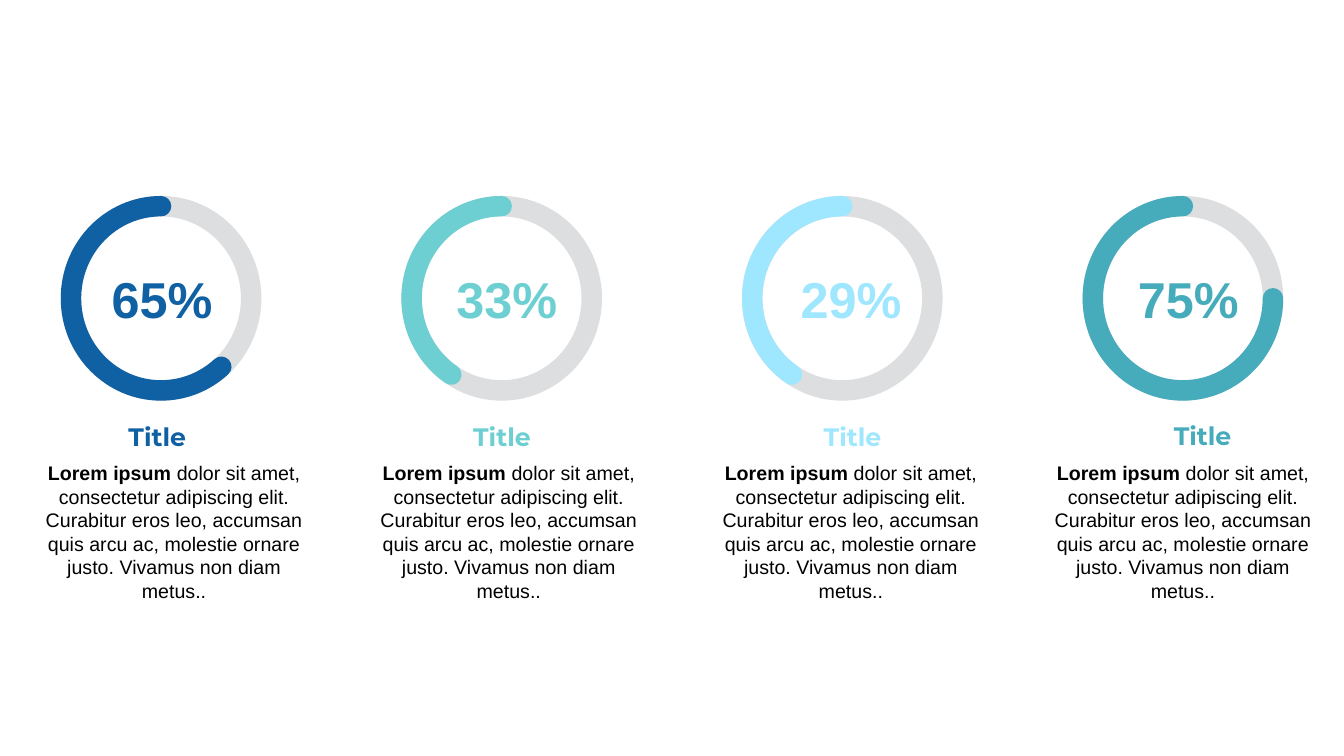
from math import cos, radians, sin, tan

from pptx import Presentation
from pptx.dml.color import RGBColor
from pptx.enum.shapes import MSO_SHAPE
from pptx.enum.text import MSO_AUTO_SIZE, PP_ALIGN
from pptx.oxml.ns import qn
from pptx.util import Pt

DONUT = MSO_SHAPE.DONUT
CENTER = PP_ALIGN.CENTER
GROW = MSO_AUTO_SIZE.SHAPE_TO_FIT_TEXT

BLACK = RGBColor(0x00, 0x00, 0x00)
GREY = RGBColor(0xDC, 0xDE, 0xE0)
BLUE = RGBColor(0x10, 0x60, 0xA4)
TEAL = RGBColor(0x6D, 0xCF, 0xD2)
SKY = RGBColor(0x9F, 0xE7, 0xFF)
SEA = RGBColor(0x46, 0xAC, 0xBC)

LEFT, TOP, PITCH = 43.4, 140, 243.3
WIDTH, HEIGHT, BAND = 143.3, 146.2, 14.6

LEAD = "Lorem ipsum "
BODY = (
    "dolor sit amet, consectetur adipiscing elit. Curabitur eros leo, "
    "accumsan quis arcu ac, molestie ornare justo. Vivamus non diam metus.."
)

DIALS = [
    ("65%", BLUE, 222, 70.4, 51.2, 297.4, 18.5),
    ("33%", TEAL, 146, 316.7, 297.4, 297.4, 257.6),
    ("29%", SKY, 146, 562.5, 547.8, 297.4, 502),
    ("75%", SEA, 270, 803.5, 797.8, 296.6, 739.2),
]


def write(para, text, size=14, color=BLACK, font="Arial", bold=False):
    run = para.add_run()
    run.text = text
    run.font.name = font
    run.font.size = Pt(size)
    run.font.bold = bold
    run.font.color.rgb = color


def curve(mid, sine, cosine, stops):
    dots = []
    for start, end in zip(stops, stops[1:]):
        a, b = radians(start), radians(end)
        pull = 4 / 3 * tan((b - a) / 4)
        for sa, ca in (
            (sin(a) + pull * cos(a), cos(a) - pull * sin(a)),
            (sin(b) - pull * cos(b), cos(b) + pull * sin(b)),
            (sin(b), cos(b)),
        ):
            dots.append(
                tuple(Pt(m + s * sa + c * ca) for m, s, c in zip(mid, sine, cosine))
            )
    return dots


class Board:
    def __init__(self, slide):
        self.slide = slide

    def paint(self, shape, color):
        shape.shadow.inherit = False
        shape.fill.solid()
        shape.fill.fore_color.rgb = color
        shape.line.fill.background()

    def ring(self, x, y):
        shape = self.slide.shapes.add_shape(
            DONUT, Pt(x), Pt(y), Pt(WIDTH), Pt(HEIGHT)
        )
        shape.adjustments[0] = BAND / WIDTH
        self.paint(shape, GREY)

    def arc(self, x, y, sweep, color):
        mid = x + WIDTH / 2, y + HEIGHT / 2
        cap = BAND / 2

        def sweep_at(inset, stops):
            across, down = WIDTH / 2 - inset, HEIGHT / 2 - inset
            return curve(mid, (-across, 0), (0, -down), stops)

        def cap_at(turn, stops):
            s, c = sin(radians(turn)), cos(radians(turn))
            hub = (
                mid[0] - (WIDTH / 2 - cap) * s,
                mid[1] - (HEIGHT / 2 - cap) * c,
            )
            return curve(hub, (-cap * c, cap * s), (-cap * s, -cap * c), stops)

        stops = [*range(0, sweep, 90), sweep]
        dots = sweep_at(0, stops)
        dots += cap_at(sweep, [0, 90, 180])
        dots += sweep_at(BAND, stops[::-1])
        dots += cap_at(0, [180, 270, 360])
        pen = self.slide.shapes.build_freeform(Pt(mid[0]), Pt(y))
        pen.add_line_segments(dots, close=True)
        shape = pen.convert_to_shape()
        self.bend(shape)
        self.paint(shape, color)

    def bend(self, shape):
        steps = list(shape.element.iter(qn("a:lnTo")))
        for first, second, third in zip(steps[::3], steps[1::3], steps[2::3]):
            first.tag = qn("a:cubicBezTo")
            for step in (second, third):
                first.append(step[0])
                step.getparent().remove(step)

    def label(self, x, y, w, h):
        frame = self.slide.shapes.add_textbox(
            Pt(x), Pt(y), Pt(w), Pt(h)
        ).text_frame
        frame.word_wrap = True
        frame.auto_size = GROW
        para = frame.paragraphs[0]
        para.alignment = CENTER
        return para


def main():
    deck = Presentation()
    deck.slide_width, deck.slide_height = Pt(960), Pt(540)
    board = Board(deck.slides.add_slide(deck.slide_layouts[6]))
    for i, (share, color, sweep, num_x, head_x, head_y, body_x) in enumerate(DIALS):
        x = LEFT + i * PITCH
        board.ring(x, TOP)
        board.arc(x, TOP, sweep, color)
        para = board.label(num_x, 187.8, 90.7, 51.1)
        write(para, share, size=36, color=color, bold=True)
        para = board.label(head_x, head_y, 122.4, 28.8)
        write(para, "Title", size=18, color=color, font="Montserrat", bold=True)
        para = board.label(body_x, 325.7, 211.7, 108.7)
        write(para, LEAD, bold=True)
        write(para, BODY)
    deck.save("out.pptx")


if __name__ == "__main__":
    main()
